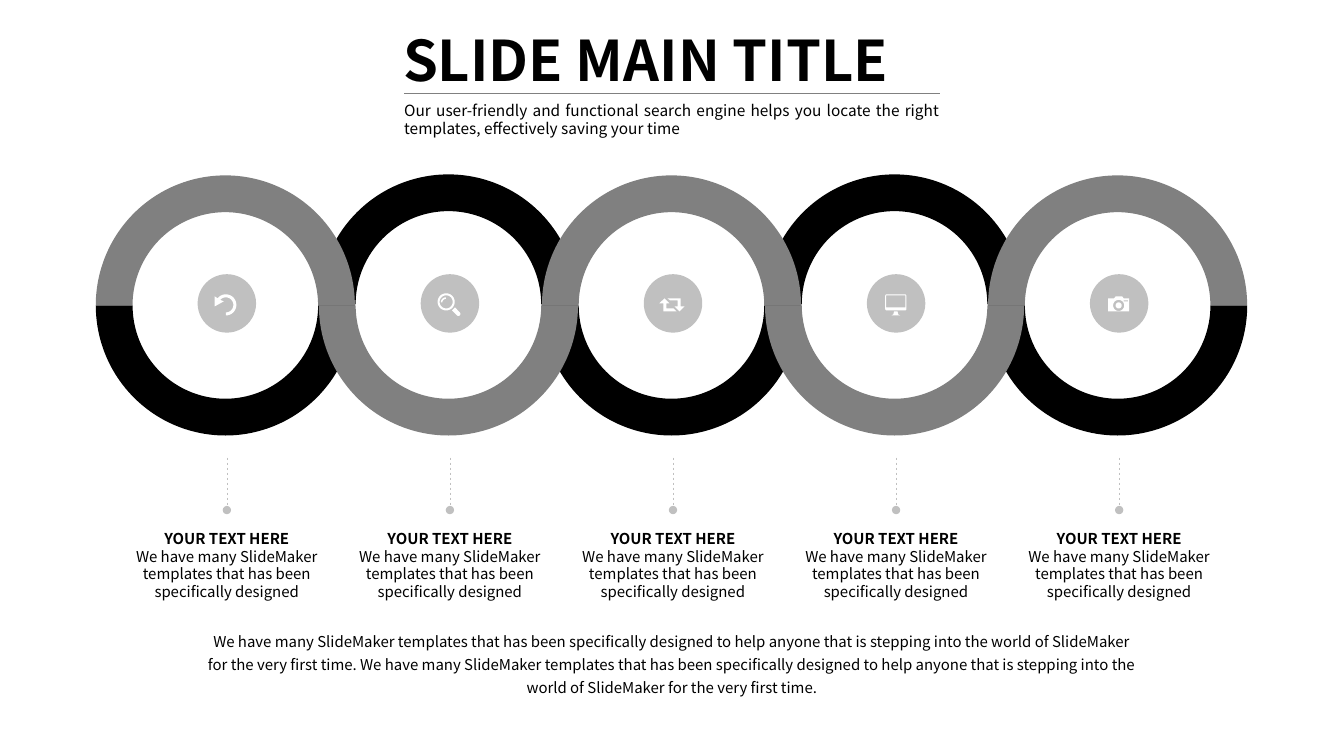
from math import cos, radians, sin

from pptx import Presentation
from pptx.dml.color import RGBColor
from pptx.enum.dml import MSO_LINE_DASH_STYLE as Dash
from pptx.enum.shapes import MSO_CONNECTOR as Connector, MSO_SHAPE as Shape
from pptx.enum.text import MSO_AUTO_SIZE as AutoSize, PP_ALIGN as Align
from pptx.oxml.ns import qn
from pptx.util import Pt
from lxml.etree import SubElement

PX = 9144
SLIDE = (1333, 750)
FONT = "Noto Sans CJK SC"
COLORS = {"black": "000000", "gray": "808080", "silver": "C0C0C0", "white": "FFFFFF"}

TITLE = "SLIDE MAIN TITLE"
SUBTITLE = (
    "Our user-friendly and functional search engine helps you locate the right "
    "templates, effectively saving your time"
)
HEADING = "YOUR TEXT HERE"
CAPTION = "We have many SlideMaker templates that has been specifically designed"
SUMMARY = (
    f"{CAPTION} to help anyone that is stepping into the world of SlideMaker "
    "for the very first time. "
    f"{CAPTION} to help anyone that is stepping into the world of SlideMaker "
    "for the very first time."
)

# A pair is a corner; five numbers are an arc: centre x, centre y, radius, start, end.
UNDO = [
    [(-12, -7), (-1, 1.5, 10.5, 219, 450), (-1, 1.5, 7.5, 450, 222), (-3, -2), (-12, 3)],
]
SEARCH = [
    [(-3.75, -1.5, 8.5, 0, 360)],
    [(-3.75, -1.5, 6.5, 360, 0)],
    [(-4, -1, 5, 180, 270), (-4, -1, 3.5, 270, 180)],
    [(5, 4), (2, 7), (8.4, 10.4, 2, 135, -45)],
]
REPEAT = [
    [(-5.5, -5), (7.5, -5), (7.5, 3), (11.5, 3), (6.5, 8), (1.5, 3), (4.5, 3), (4.5, -3), (-3, -3)],
    [(-8.5, -5), (-3.5, 0), (-6.5, 0), (-6.5, 5), (0.5, 5), (3.5, 8), (-9.5, 8), (-9.5, 0), (-13.5, 0)],
]
MONITOR = [
    [(-9.25, -7.5, 1.5, 180, 270), (8.75, -7.5, 1.5, 270, 360),
     (8.75, 5.5, 1.5, 0, 90), (-9.25, 5.5, 1.5, 90, 180)],
    [(-9.75, -8), (-9.75, 4), (9.25, 4), (9.25, -8)],
    [(-2, 8), (1.5, 8), (2.25, 11), (4.25, 12), (-4.75, 12), (-2.75, 11)],
]
CAMERA = [
    [(-11, 8), (-11, -5), (-5, -5), (-3.5, -7), (3, -7), (4.5, -5), (10, -5), (10, 8)],
    [(-0.5, 2, 5.5, 360, 0)],
    [(-0.5, 2, 3, 0, 360)],
    [(4.5, -3), (4.5, -2), (9, -2), (9, -3)],
]
ICONS = [UNDO, SEARCH, REPEAT, MONITOR, CAMERA]

PITCH = 221.25
FIRST_CENTER = 225
DISC_CENTER_Y, DISC_SIZE = 301, 58
RING_LEFT, RING_TOP, RING_WIDTH, RING_HEIGHT, RING_BAND = 95, 174, 257, 258, 36.5
STEM_TOP, STEM_BOTTOM = 454, 506
CAPTION_LEFT, CAPTION_TOP, CAPTION_WIDTH, CAPTION_HEIGHT = 115, 520, 220, 82


def emu(*lengths):
    return [round(length * PX) for length in lengths]


def color(name):
    return RGBColor.from_string(COLORS[name])


def paint(shape, name):
    shape.shadow.inherit = False
    shape.fill.solid()
    shape.fill.fore_color.rgb = color(name)
    shape.line.fill.background()


def add_preset(slide, kind, box, name):
    shape = slide.shapes.add_shape(kind, *emu(*box))
    paint(shape, name)
    return shape


def add_half_ring(slide, column, upper, name):
    top = RING_TOP - (upper and name == "black")
    box = (RING_LEFT + column * PITCH, top, RING_WIDTH, RING_HEIGHT)
    ring = add_preset(slide, Shape.BLOCK_ARC, box, name)
    ring.adjustments[2] = round(RING_BAND / RING_WIDTH, 3)
    ring.rotation = 0 if upper else 180


def outline(parts, center_x, center_y):
    points = []
    for part in parts:
        if len(part) == 2:
            points.append(part)
            continue
        x, y, radius, start, end = part
        steps = max(4, round(abs(end - start) / 10))
        for step in range(steps + 1):
            angle = radians(start + (end - start) * step / steps)
            points.append((x + radius * cos(angle), y + radius * sin(angle)))
    return [emu(center_x + x, center_y + y) for x, y in points]


def add_icon(slide, contours, center_x, center_y):
    first, *others = [outline(parts, center_x, center_y) for parts in contours]
    builder = slide.shapes.build_freeform(*first[0], scale=1.0)
    builder.add_line_segments(first[1:], close=True)
    for points in others:
        builder.move_to(*points[0])
        builder.add_line_segments(points[1:], close=True)
    paint(builder.convert_to_shape(), "white")


def add_line(slide, ends, name, width):
    line = slide.shapes.add_connector(Connector.STRAIGHT, *emu(*ends))
    line.line.color.rgb = color(name)
    line.line.width = Pt(width)
    SubElement(line._element.spPr, qn("a:effectLst"))
    return line


def add_stem(slide, x):
    stem = add_line(slide, (x, STEM_TOP, x, STEM_BOTTOM), "silver", 0.5)
    stem.line.dash_style = Dash.DASH
    SubElement(stem.line._get_or_add_ln(), qn("a:tailEnd"), type="oval")


def add_text(slide, box, lines, size, align, spacing=None):
    frame = slide.shapes.add_textbox(*emu(*box)).text_frame
    frame.word_wrap = True
    frame.auto_size = AutoSize.SHAPE_TO_FIT_TEXT
    for index, (text, bold) in enumerate(lines):
        paragraph = frame.add_paragraph() if index else frame.paragraphs[0]
        paragraph.alignment = align
        if spacing:
            paragraph.line_spacing = spacing
        run = paragraph.add_run()
        run.text = text
        run.font.name = FONT
        run.font.size = Pt(size)
        run.font.bold = bold
        run.font.color.rgb = color("black")


def main():
    presentation = Presentation()
    presentation.slide_width, presentation.slide_height = emu(*SLIDE)
    slide = presentation.slides.add_slide(presentation.slide_layouts[6])

    for name in ("black", "gray"):
        for column in range(len(ICONS)):
            upper = (column % 2 == 0) == (name == "gray")
            add_half_ring(slide, column, upper, name)

    for column, icon in enumerate(ICONS):
        shift = column * PITCH
        center = FIRST_CENTER + shift
        disc = (center - DISC_SIZE / 2, DISC_CENTER_Y - DISC_SIZE / 2, DISC_SIZE, DISC_SIZE)
        add_preset(slide, Shape.OVAL, disc, "silver")
        add_icon(slide, icon, center, DISC_CENTER_Y)
        add_stem(slide, center)
        caption_box = (CAPTION_LEFT + shift, CAPTION_TOP, CAPTION_WIDTH, CAPTION_HEIGHT)
        add_text(slide, caption_box, [(HEADING, True), (CAPTION, False)], 10.7, Align.CENTER)

    add_text(slide, (194, 617, 945, 80), [(SUMMARY, False)], 10.7, Align.CENTER, 1.3)
    add_text(slide, (390, 20, 553, 78), [(TITLE, True)], 40, Align.JUSTIFY)
    add_text(slide, (391, 95, 551, 47), [(SUBTITLE, False)], 11, Align.JUSTIFY)
    add_line(slide, (401, 93, 932, 93), "gray", 1)
    presentation.save("out.pptx")


if __name__ == "__main__":
    main()
